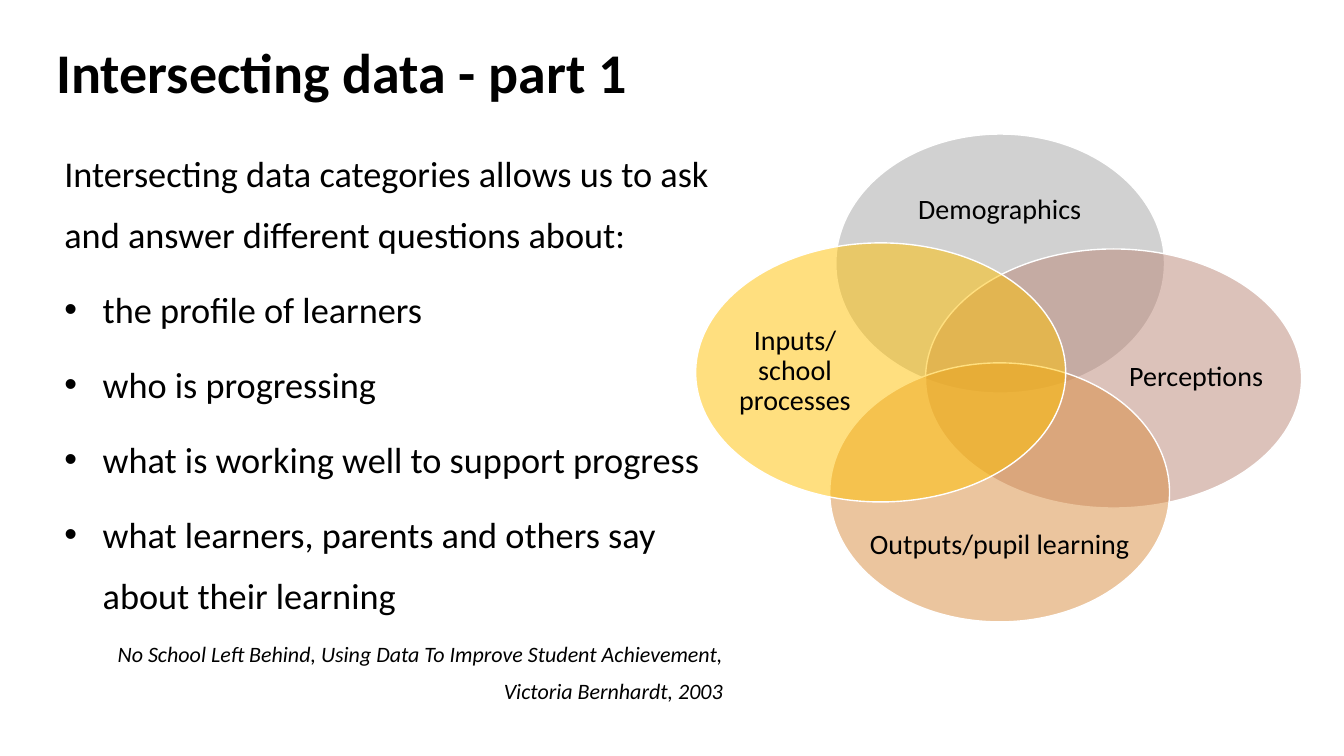
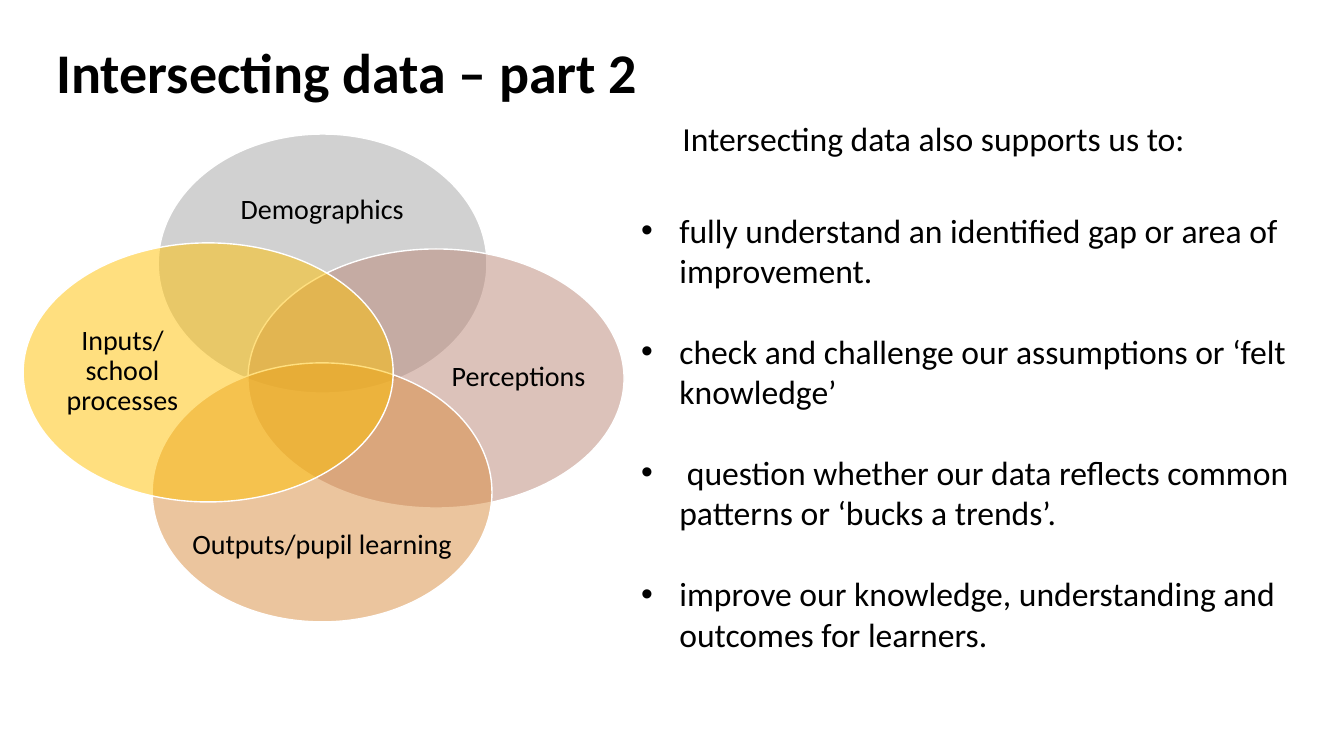
from dataclasses import dataclass

from lxml import etree
from pptx import Presentation
from pptx.dml.color import RGBColor
from pptx.enum.shapes import MSO_SHAPE
from pptx.enum.text import MSO_ANCHOR, PP_ALIGN
from pptx.oxml.ns import qn
from pptx.util import Inches, Pt

ELLIPSE = MSO_SHAPE.OVAL
TOP, MIDDLE = MSO_ANCHOR.TOP, MSO_ANCHOR.MIDDLE
LEFT, CENTER, RIGHT = PP_ALIGN.LEFT, PP_ALIGN.CENTER, PP_ALIGN.RIGHT


@dataclass(frozen=True)
class Theme:
    font: str = "Calibri"
    bullet_font: str = "Arial"
    text: str = "000000"
    outline: str = "FFFFFF"
    demographics: str = "A5A5A5"
    perceptions: str = "BB8676"
    outputs: str = "D98C3F"
    inputs: str = "FFC000"
    opacity: int = 50
    title_size: float = 40
    body_size: float = 25.9
    list_size: float = 24
    label_size: float = 20
    source_size: float = 15.7
    hanging: float = 0.38


THEME = Theme()


# Text
def add_box(shapes, left, top, width, height, anchor=TOP, inset=True):
    """Add an empty wrapping text box and return its text frame."""
    box = shapes.add_textbox(Inches(left), Inches(top), Inches(width), Inches(height))
    frame = box.text_frame
    frame.word_wrap = True
    frame.vertical_anchor = anchor
    if not inset:
        frame.margin_left = frame.margin_right = 0
        frame.margin_top = frame.margin_bottom = 0
    return frame


def add_bullet(para):
    properties = para._p.get_or_add_pPr()
    indent = Inches(THEME.hanging)
    properties.set("marL", str(indent))
    properties.set("indent", str(-indent))
    etree.SubElement(properties, qn("a:buFont"), typeface=THEME.bullet_font)
    etree.SubElement(properties, qn("a:buChar"), char="•")


def write(frame, text, size, bold=False, italic=False, align=LEFT,
          spacing=1.0, before=0, bullet=False):
    """Write one paragraph, using the frame's first one while it is empty."""
    para = frame.paragraphs[0]
    if para.runs:
        para = frame.add_paragraph()
    para.alignment = align
    para.line_spacing = spacing
    para.space_before = Pt(before)
    if bullet:
        add_bullet(para)
    span = para.add_run()
    span.text = text
    font = span.font
    font.name, font.size = THEME.font, Pt(size)
    font.bold, font.italic = bold, italic
    font.color.rgb = RGBColor.from_string(THEME.text)


def add_page(deck, title):
    page = deck.slides.add_slide(deck.slide_layouts[6])
    frame = add_box(page.shapes, 0.46, 0.36, 11.85, 0.78, anchor=MIDDLE)
    write(frame, title, THEME.title_size, bold=True, spacing=0.9)
    return page


# Venn diagram
def add_ellipse(shapes, left, top, width, height, color):
    ellipse = shapes.add_shape(ELLIPSE, Inches(left), Inches(top),
                               Inches(width), Inches(height))
    ellipse.shadow.inherit = False
    ellipse.fill.solid()
    ellipse.fill.fore_color.rgb = RGBColor.from_string(color)
    ellipse.line.color.rgb = RGBColor.from_string(THEME.outline)
    ellipse.line.width = Pt(1)
    fill_color = ellipse._element.spPr.find(qn("a:solidFill")).find(qn("a:srgbClr"))
    etree.SubElement(fill_color, qn("a:alpha"), val=str(THEME.opacity * 1000))


def add_venn(page, left, inputs_left):
    """Draw the four data categories; left is the left of Demographics."""
    shapes = page.shapes.add_group_shape().shapes
    # Name, colour, ellipse, label area, label alignment
    categories = [
        ("Demographics", THEME.demographics,
         (left, 1.33, 3.26, 2.57), (left + 0.37, 1.68, 2.51, 0.81), CENTER),
        ("Perceptions", THEME.perceptions,
         (left + 0.89, 2.47, 3.73, 2.57), (left + 2.91, 2.76, 1.44, 1.97), LEFT),
        ("Outputs/pupil learning", THEME.outputs,
         (left - 0.06, 3.6, 3.37, 2.57), (left + 0.33, 5.01, 2.59, 0.81), CENTER),
        ("Inputs/ school processes", THEME.inputs,
         (inputs_left, 2.41, 3.67, 2.57), (inputs_left + 0.28, 2.7, 1.41, 1.97), CENTER),
    ]
    for name, color, outline, label, align in categories:
        add_ellipse(shapes, *outline, color)
        frame = add_box(shapes, *label, anchor=MIDDLE, inset=False)
        write(frame, name, THEME.label_size, align=align, spacing=0.9)


# Pages
def build_questions(deck):
    page = add_page(deck, "Intersecting data - part 1")
    frame = add_box(page.shapes, 0.54, 1.28, 6.73, 6.01)
    rhythm = {"spacing": 1.4, "before": 10}
    write(frame, "Intersecting data categories allows us to ask and answer "
          "different questions about:", THEME.body_size, **rhythm)
    for topic in ("the profile of learners",
                  "who is progressing",
                  "what is working well to support progress",
                  "what learners, parents and others say about their learning"):
        write(frame, topic, THEME.body_size, bullet=True, **rhythm)
    write(frame, "No School Left Behind, Using Data To Improve Student Achievement, "
          "Victoria Bernhardt, 2003", THEME.source_size, italic=True, align=RIGHT, **rhythm)
    add_venn(page, left=8.29, inputs_left=6.9)


def build_benefits(deck):
    page = add_page(deck, "Intersecting data – part 2")
    add_venn(page, left=1.57, inputs_left=0.23)
    heading = add_box(page.shapes, 6.67, 0.92, 6.67, 0.64)
    write(heading, "Intersecting data also supports us to:", THEME.list_size,
          spacing=1.5, before=10)
    benefits = ("fully understand an identified gap or area of improvement.",
                "check and challenge our assumptions or ‘felt knowledge’",
                " question whether our data reflects common patterns or ‘bucks a trends’.",
                "improve our knowledge, understanding and outcomes for learners.")
    frame = add_box(page.shapes, 6.26, 2.03, 6.67, 4.55)
    for index, benefit in enumerate(benefits):
        write(frame, benefit, THEME.list_size, bullet=True, before=29 if index else 0)


def main():
    deck = Presentation()
    deck.slide_width, deck.slide_height = Inches(13.33), Inches(7.5)
    build_questions(deck)
    build_benefits(deck)
    deck.save("out.pptx")


if __name__ == "__main__":
    main()
